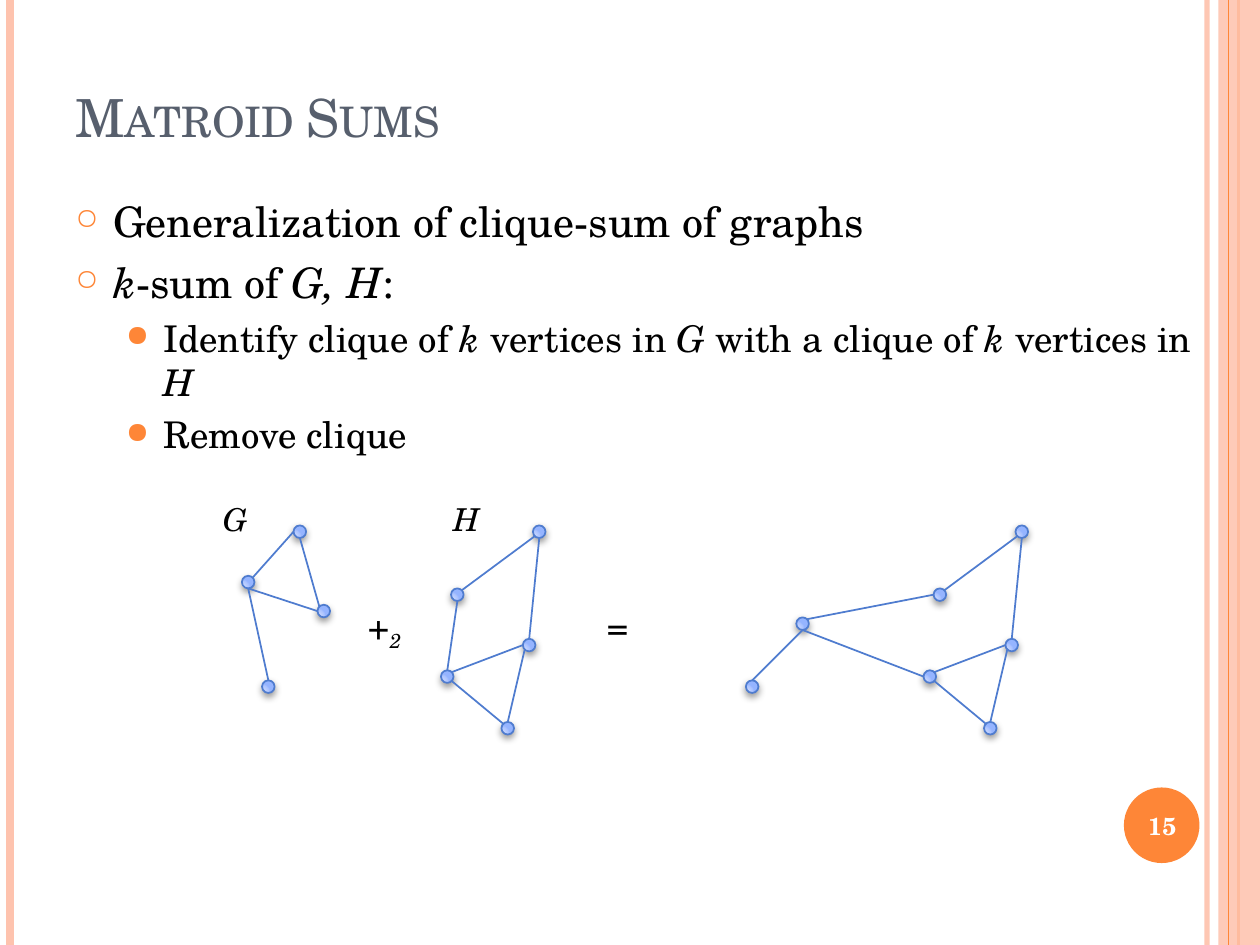
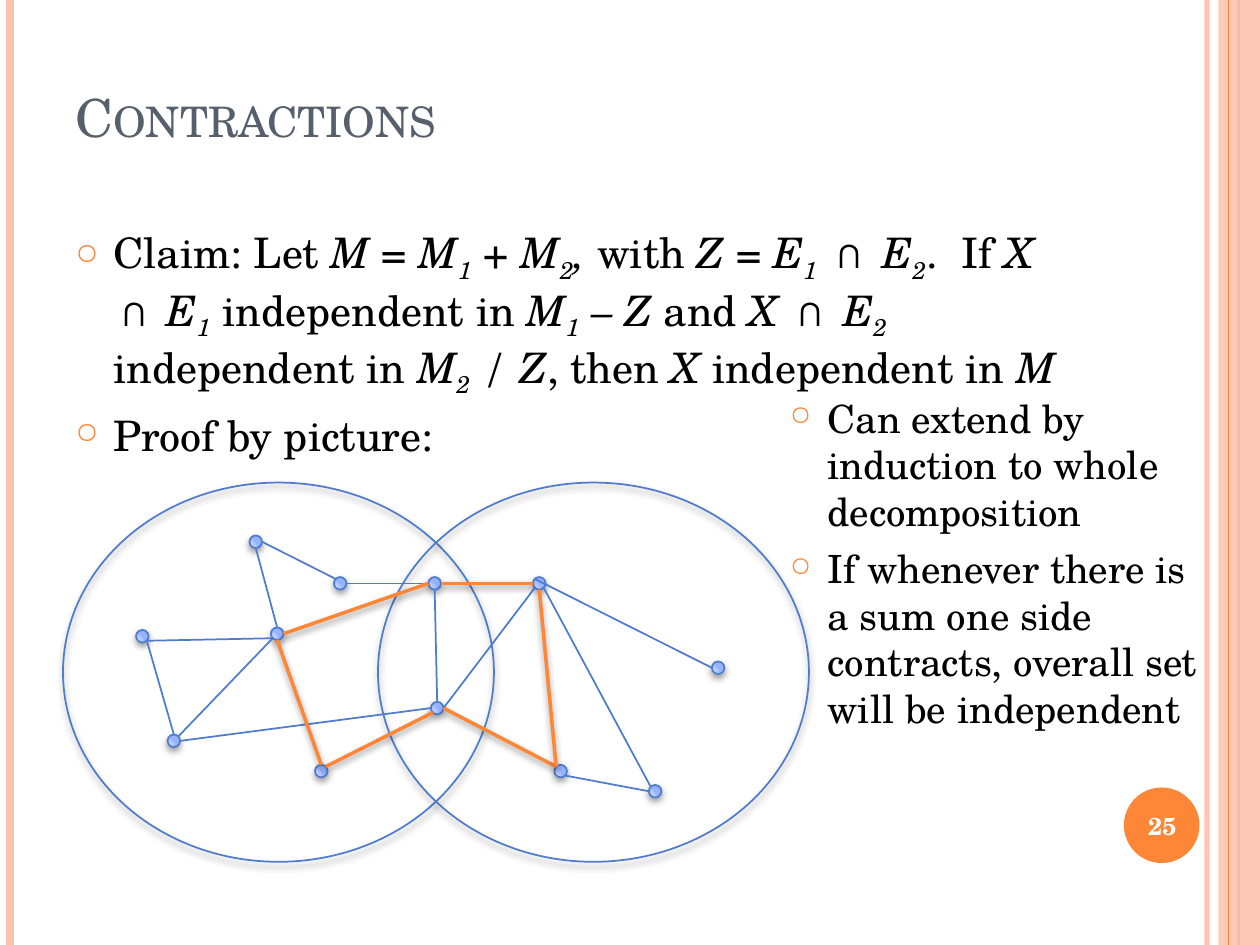
import lxml.etree
import pptx
import pptx.dml.color
import pptx.enum.shapes
import pptx.enum.text
import pptx.oxml
import pptx.oxml.ns
import pptx.util

Inches, Pt = pptx.util.Inches, pptx.util.Pt
qn = pptx.oxml.ns.qn
SHAPE = pptx.enum.shapes.MSO_SHAPE
ALIGN = pptx.enum.text.PP_ALIGN
ANCHOR = pptx.enum.text.MSO_ANCHOR

COLORS = {"orange": "FE8637", "peach": "FEC3AE", "slate": "575F6D",
          "text": "000000", "white": "FFFFFF", "edge": "4F7CCF", "shadow": "000000"}
VERTEX_GRADIENT = {0: "CFDCFF", 30: "CBD9FF", 75: "AFC6FF", 100: "95B4FF"}
FONT = "TeX Gyre Schola"
WIDTH, HEIGHT = 10, 7.5

# Bullet levels: text margin, bullet sign, bullet size in percent, space before
LEVELS = [(0.3, "○", 70, 6), (0.7, "●", 80, 5)]
HANG = 0.3

# Vertices and the eight compass points on their rims
VERTEX_SIZE = 0.1
RIM = VERTEX_SIZE / 2
SLANT = RIM * 0.71
COMPASS = {"N": (0, -RIM), "S": (0, RIM), "W": (-RIM, 0), "E": (RIM, 0),
           "NW": (-SLANT, -SLANT), "NE": (SLANT, -SLANT),
           "SW": (-SLANT, SLANT), "SE": (SLANT, SLANT)}

# Graphs: vertex corners relative to the graph's box; edges as "vertex point vertex point"
G_VERTICES = {"hub": (0, 0.4), "right": (0.6, 0.63), "leaf": (0.16, 1.23), "top": (0.41, 0)}
G_EDGES = ["hub NE top W", "hub S right W", "top S right NW", "hub S leaf N"]

H_VERTICES = {"left": (0, 1.15), "upper": (0.08, 0.5), "right": (0.65, 0.9),
              "top": (0.73, 0), "bottom": (0.48, 1.56)}
H_CLIQUE = ["left N upper S"]
H_REST = ["left SE bottom NW", "left NE right W", "bottom N right SW",
          "right N top S", "upper NE top SW"]

SUM_VERTICES = {**H_VERTICES, "hub": (-1.01, 0.73), "leaf": (-1.41, 1.23)}
SUM_EDGES = H_REST + ["hub NE upper W", "hub S left W", "hub S leaf N"]

PROOF_VERTICES = {
    "z_top": (2.9, 0.75), "z_low": (2.92, 1.74),
    "foot_l": (2, 2.24), "low_l": (0.83, 2), "far_l": (0.58, 1.17),
    "peak": (1.48, 0.42), "hub_l": (1.65, 1.15), "mid": (2.15, 0.75),
    "hub_r": (3.73, 0.75), "foot_r": (3.9, 2.24), "low_r": (4.65, 2.4), "far_r": (5.15, 1.42)}
PROOF_EDGES = [
    "z_top S z_low N", "z_top W mid E", "mid NW peak E", "hub_l N peak S",
    "hub_l SW far_l SE", "hub_l SW low_l NE", "far_l SE low_l N", "z_low W low_l E",
    "hub_r NW far_r W", "hub_r SW z_low E", "low_r W foot_r SE", "low_r NW hub_r SE"]
PROOF_CYCLE = [
    "foot_l NE z_low SW", "z_top W hub_l E", "foot_l N hub_l S",
    "z_top E hub_r W", "z_low E foot_r NW", "hub_r S foot_r NW"]


def rgb(name):
    return pptx.dml.color.RGBColor.from_string(COLORS[name])


def set_all(target, values):
    for attribute, value in values.items():
        setattr(target, attribute, value)


def add_xml(parent, tag, **attributes):
    return lxml.etree.SubElement(
        parent, qn(tag), {key: str(value) for key, value in attributes.items()})


def fade(shape, percent):
    add_xml(shape.element.spPr.find(".//" + qn("a:srgbClr")), "a:alpha", val=percent * 1000)


def cast_shadow(effects):
    shadow = add_xml(effects, "a:outerShdw", blurRad=Pt(4), dist=Pt(2),
                     dir=90 * 60000, rotWithShape=0)
    color = add_xml(shadow, "a:srgbClr", val=COLORS["shadow"])
    add_xml(color, "a:alpha", val=40000)


# Basic parts
def add_line(slide, start, end, color, width, shadow=False):
    line = slide.shapes.add_connector(
        pptx.enum.shapes.MSO_CONNECTOR.STRAIGHT, *map(Inches, (*start, *end)))
    line.line.color.rgb = rgb(color)
    line.line.width = Pt(width)
    effects = add_xml(line.element.spPr, "a:effectLst")
    if shadow:
        cast_shadow(effects)
    return line


def add_area(slide, kind, box, fill=None, outline=None, shadow=False):
    area = slide.shapes.add_shape(kind, *map(Inches, box))
    area.shadow.inherit = False
    if fill:
        area.fill.solid()
        area.fill.fore_color.rgb = rgb(fill)
    else:
        area.fill.background()
    if outline:
        area.line.color.rgb = rgb(outline)
        area.line.width = Pt(1)
    else:
        area.line.fill.background()
    if shadow:
        cast_shadow(area.element.spPr.find(qn("a:effectLst")))
    return area


def add_runs(paragraph, marked, size, color="text", bold=False):
    """Write text in which *...* is italic and _ lowers the next character."""
    for part, stretch in enumerate(marked.split("*")):
        first, *lowered = stretch.split("_")
        pieces = [(first, False)]
        for piece in lowered:
            pieces += [(piece[0], True), (piece[1:], False)]
        for text, is_subscript in pieces:
            if not text:
                continue
            run = paragraph.add_run()
            run.text = text
            set_all(run.font, {"name": FONT, "size": Pt(size), "bold": bold,
                               "italic": part % 2 == 1})
            run.font.color.rgb = rgb(color)
            if is_subscript:
                run.font._element.set("baseline", "-25000")


def add_frame(slide, box, **values):
    frame = slide.shapes.add_textbox(*map(Inches, box)).text_frame
    set_all(frame, {"word_wrap": True, **values})
    return frame


def add_label(slide, box, marked, size):
    frame = add_frame(slide, box, word_wrap=False,
                      auto_size=pptx.enum.text.MSO_AUTO_SIZE.SHAPE_TO_FIT_TEXT)
    add_runs(frame.paragraphs[0], marked, size)


def add_bullets(slide, box, items, sizes):
    frame = add_frame(slide, box)
    for index, (level, marked) in enumerate(items):
        paragraph = frame.paragraphs[0] if index == 0 else frame.add_paragraph()
        margin, sign, percent, space = LEVELS[level]
        set_all(paragraph, {"level": level, "space_before": Pt(space)})
        properties = paragraph._p.get_or_add_pPr()
        properties.set("marL", str(Inches(margin)))
        properties.set("indent", str(Inches(-HANG)))
        add_xml(add_xml(properties, "a:buClr"), "a:srgbClr", val=COLORS["orange"])
        add_xml(properties, "a:buSzPct", val=percent * 1000)
        add_xml(properties, "a:buChar", char=sign)
        add_runs(paragraph, marked, sizes[level])


# Graph drawing
def add_vertex(slide, left, top):
    vertex = add_area(slide, SHAPE.OVAL, (left, top, VERTEX_SIZE, VERTEX_SIZE),
                      outline="edge", shadow=True)
    properties = vertex.element.spPr
    gradient = lxml.etree.Element(qn("a:gradFill"), rotWithShape="1")
    stops = add_xml(gradient, "a:gsLst")
    for position, color in VERTEX_GRADIENT.items():
        add_xml(add_xml(stops, "a:gs", pos=position * 1000), "a:srgbClr", val=color)
    add_xml(add_xml(gradient, "a:path", path="circle"), "a:fillToRect",
            l=5000, t=100000, r=120000, b=10000)
    properties.replace(properties.find(qn("a:noFill")), gradient)


def add_graph(slide, left, top, vertices, edges, cycle=()):
    for x, y in vertices.values():
        add_vertex(slide, left + x, top + y)

    def rim_point(vertex, point):
        (x, y), (dx, dy) = vertices[vertex], COMPASS[point]
        return left + x + RIM + dx, top + y + RIM + dy

    for group, color, width, shadow in ((edges, "edge", 1, False), (cycle, "orange", 2, True)):
        for edge in group:
            start, start_point, end, end_point = edge.split()
            add_line(slide, rim_point(start, start_point), rim_point(end, end_point),
                     color, width, shadow)


# Shared slide frame
def add_side_bands(slide):
    def upright(x, color, width):
        return add_line(slide, (x, 0), (x, HEIGHT), color, width)

    fade(upright(9.58, "peach", 3), 93)
    upright(0.08, "peach", 4.5)
    upright(9.83, "orange", 1.5)
    fade(add_area(slide, SHAPE.RECTANGLE, (9.67, 0, 0.33, HEIGHT), "peach"), 87)
    upright(9.75, "orange", 0.75)


def add_page_badge(slide, left, top, number):
    add_area(slide, SHAPE.OVAL, (left, top, 0.6, 0.6), "orange")
    frame = add_frame(slide, (left - 0.03, top + 0.02, 0.67, 0.57),
                      vertical_anchor=ANCHOR.MIDDLE)
    frame.paragraphs[0].alignment = ALIGN.CENTER
    add_runs(frame.paragraphs[0], str(number), 14, "white", bold=True)


def start_slide(deck, title, number):
    slide = deck.slides.add_slide(deck.slide_layouts[6])
    add_side_bands(slide)
    add_page_badge(slide, 8.92, 6.25, number)
    heading = add_frame(slide, (0.5, 0.3, 8.17, 1.25), vertical_anchor=ANCHOR.MIDDLE).paragraphs[0]
    add_runs(heading, title, 30, "slate")
    heading.runs[0].font._element.set("cap", "small")
    return slide


# Regions of the slides
def add_sum_equation(slide, left, top):
    add_graph(slide, left + 0.25, top + 0.25, G_VERTICES, G_EDGES)
    add_graph(slide, left + 1.83, top + 0.25, H_VERTICES, H_CLIQUE + H_REST)
    add_graph(slide, left + 5.66, top + 0.25, SUM_VERTICES, SUM_EDGES)
    add_label(slide, (left, top, 0.46, 0.4), "*G*", 18)
    add_label(slide, (left + 1.83, top, 0.44, 0.4), "*H*", 18)
    add_label(slide, (left + 1.16, top + 0.83, 0.53, 0.44), "*+_2*", 20)
    add_label(slide, (left + 3.05, top + 0.83, 0.43, 0.44), "*=*", 20)


def add_proof_drawing(slide, left, top):
    for offset in (0, 2.5):
        add_area(slide, SHAPE.OVAL, (left + offset, top, 3.42, 3.01),
                 outline="edge", shadow=True)
    add_graph(slide, left, top, PROOF_VERTICES, PROOF_EDGES, PROOF_CYCLE)


def build_matroid_sums(deck):
    slide = start_slide(deck, "Matroid Sums", 15)
    add_bullets(slide, (0.5, 1.5, 9.06, 2.17), [
        (0, "Generalization of clique-sum of graphs"),
        (0, "*k*-sum of *G, H*:"),
        (1, "Identify clique of *k* vertices in *G* with a clique of *k* vertices in *H*"),
        (1, "Remove clique")], (24, 21))
    add_sum_equation(slide, 1.67, 3.92)


def build_contractions(deck):
    slide = start_slide(deck, "Contractions", 25)
    add_bullets(slide, (0.5, 1.75, 8.17, 2.08), [
        (0, "Claim: Let *M = M_1 + M_2, *with *Z = E_1 ∩ E_2*.  If *X ∩ E_1* independent in "
            "*M_1 – Z *and *X ∩ E_2* independent in *M_2 / Z*, then *X* independent in *M*"),
        (0, "Proof by picture:")], (24,))
    add_proof_drawing(slide, 0.5, 3.83)
    add_bullets(slide, (6.17, 3.08, 3.58, 3), [
        (0, "Can extend by induction to whole decomposition"),
        (0, "If whenever there is a sum one side contracts, overall set will be independent")],
        (22.2,))


def main():
    deck = pptx.Presentation()
    set_all(deck, {"slide_width": Inches(WIDTH), "slide_height": Inches(HEIGHT)})
    build_matroid_sums(deck)
    build_contractions(deck)
    deck.save("out.pptx")


if __name__ == "__main__":
    main()
